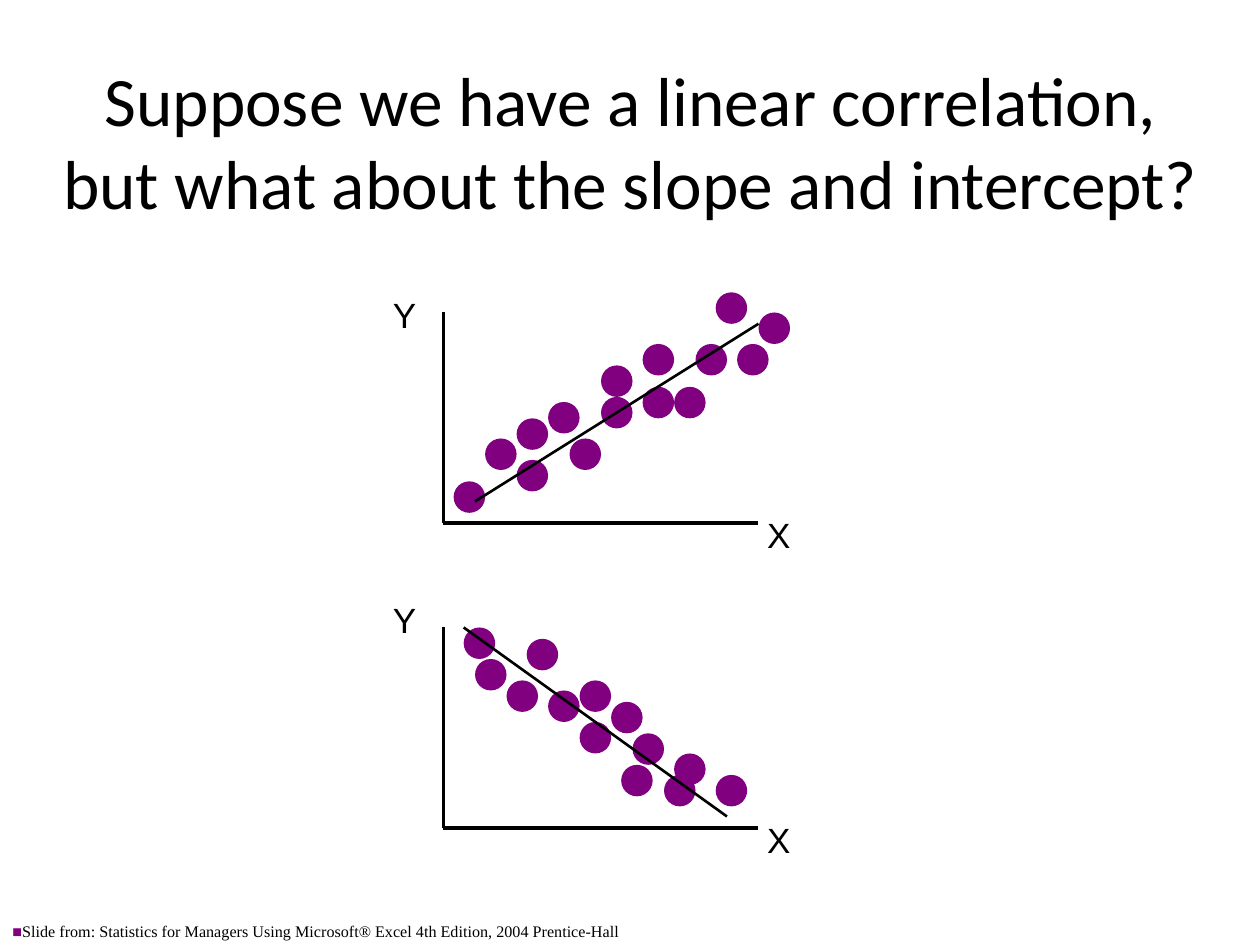
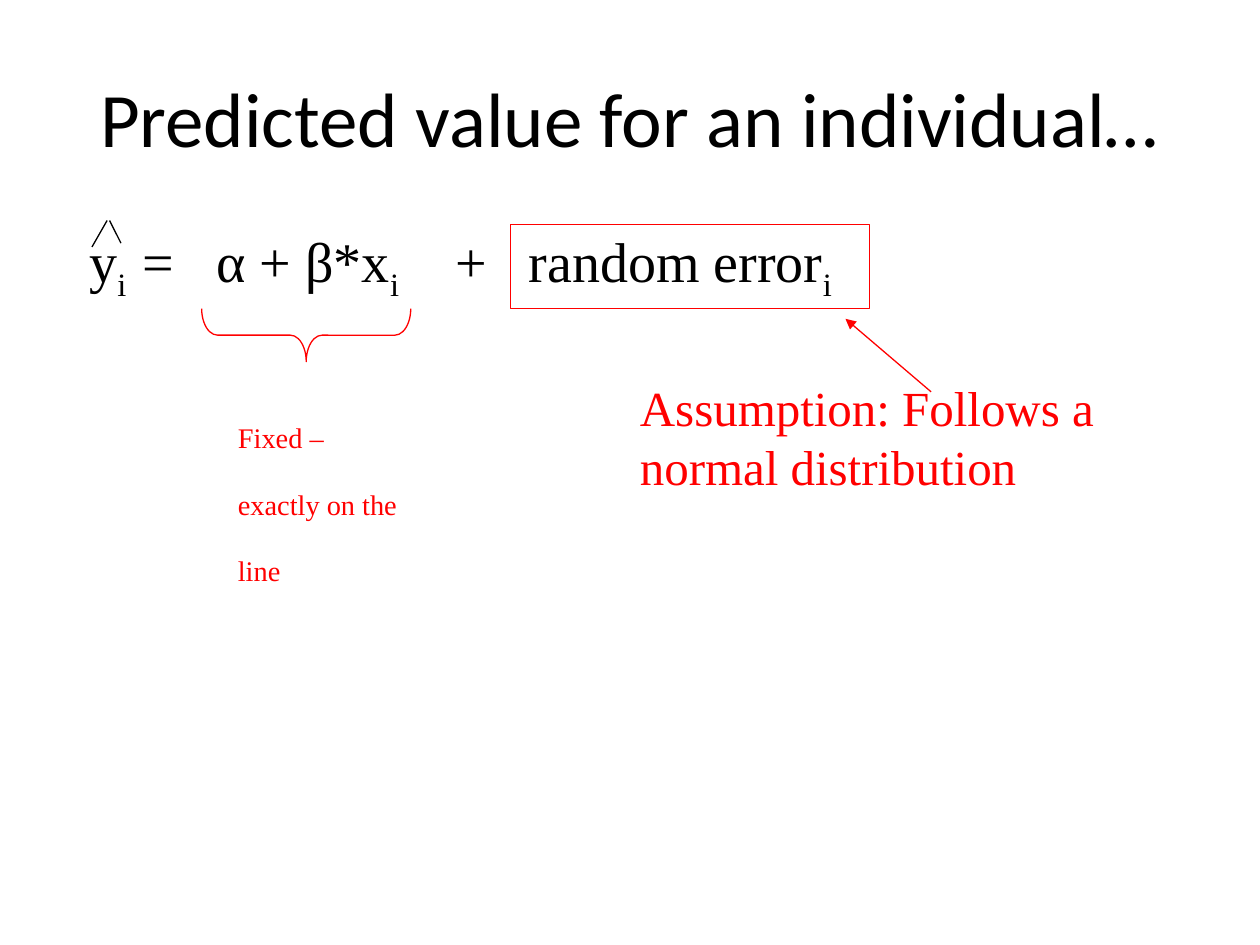
from lxml.etree import SubElement
from pptx import Presentation
from pptx.dml.color import RGBColor
from pptx.enum.shapes import MSO_CONNECTOR as LINE, MSO_SHAPE as SHAPE
from pptx.enum.text import MSO_ANCHOR as ANCHOR, PP_ALIGN as ALIGN
from pptx.oxml.ns import qn
from pptx.util import Inches, Pt

# Shared look
BLACK, RED, PURPLE = "000000", "FF0000", "800080"
SANS, SERIF, TITLE_FONT = "Arial", "Times New Roman", "Calibri"
DOT_SIZE = 0.25
AXIS_LEFT, AXIS_RIGHT = 3.52, 6.02

# Top-left corners of the dots in each scatter
RISING_DOTS = [
    (3.6, 3.82), (3.85, 3.48), (5.68, 2.32), (5.85, 2.73), (4.1, 3.65),
    (6.02, 2.48), (5.1, 3.07), (5.1, 2.73), (5.52, 2.73), (4.77, 2.9),
    (4.1, 3.32), (4.35, 3.19), (5.35, 3.07), (4.77, 3.15), (4.52, 3.48),
]
FALLING_DOTS = [
    (5.27, 6.15), (3.77, 5.23), (5.68, 6.15), (4.18, 5.07), (5.02, 5.82),
    (5.35, 5.98), (4.6, 5.4), (3.68, 4.98), (4.02, 5.4), (4.35, 5.48),
    (4.93, 6.07), (4.85, 5.57), (4.6, 5.73),
]


def paint(color_format, hex_color):
    color_format.rgb = RGBColor.from_string(hex_color)


def style_font(font, name, size, color=BLACK):
    font.name, font.size = name, Pt(size)
    paint(font.color, color)


def place(shape, left, top, width, height):
    shape.left, shape.top = Inches(left), Inches(top)
    shape.width, shape.height = Inches(width), Inches(height)


def set_title(page, text, size, left, top, width, height):
    title = page.shapes.title
    place(title, left, top, width, height)
    title.text_frame.text = text
    title.text_frame.vertical_anchor = ANCHOR.MIDDLE
    para = title.text_frame.paragraphs[0]
    para.alignment = ALIGN.CENTER
    style_font(para.font, TITLE_FONT, size)


def add_text(page, text, left, top, width, height, font, size,
             color=BLACK, wrap=True):
    box = page.shapes.add_textbox(*map(Inches, (left, top, width, height)))
    box.text_frame.word_wrap = wrap
    para = box.text_frame.paragraphs[0]
    para.text = text
    style_font(para.font, font, size, color)
    return box.text_frame


def add_line(page, start, end, width, color=BLACK, arrow=False):
    line = page.shapes.add_connector(
        LINE.STRAIGHT, *map(Inches, (*start, *end)))
    line.line.width = Pt(width)
    paint(line.line.color, color)
    properties = line._element.spPr
    if arrow:
        SubElement(properties.find(qn("a:ln")), qn("a:tailEnd"), type="triangle")
    SubElement(properties, qn("a:effectLst"))


def add_dot(page, left, top):
    dot = page.shapes.add_shape(
        SHAPE.OVAL, *map(Inches, (left, top, DOT_SIZE, DOT_SIZE)))
    dot.shadow.inherit = False
    dot.fill.solid()
    paint(dot.fill.fore_color, PURPLE)
    dot.line.fill.background()


def add_outline(page, kind, left, top, width, height):
    shape = page.shapes.add_shape(
        kind, *map(Inches, (left, top, width, height)))
    shape.shadow.inherit = False
    shape.fill.background()
    shape.line.width = Pt(0.75)
    paint(shape.line.color, RED)
    return shape


def add_scatter(page, top, bottom, y_label_top, dots, trend):
    corner = (AXIS_LEFT, bottom)
    add_line(page, (AXIS_LEFT, top), corner, 2)
    add_line(page, corner, (AXIS_RIGHT, bottom), 2)
    for name, left, label_top in (("Y", AXIS_LEFT - 0.5, y_label_top),
                                  ("X", AXIS_RIGHT - 0.03, bottom - 0.12)):
        add_text(page, name, left, label_top, 0.39, 0.43, SANS, 20, wrap=False)
    for dot in dots:
        add_dot(page, *dot)
    add_line(page, *trend, 1.5)


def add_source_note(page, text):
    frame = add_text(page, text, 0, 7.12, 8.59, 0.37, SERIF, 9.2)
    frame.vertical_anchor = ANCHOR.BOTTOM
    frame.margin_bottom = Inches(0.02)
    properties = frame.paragraphs[0]._p.get_or_add_pPr()
    font_defaults = properties.find(qn("a:defRPr"))
    bullet_color = SubElement(properties, qn("a:buClr"))
    SubElement(bullet_color, qn("a:srgbClr"), val=PURPLE)
    SubElement(properties, qn("a:buSzPct"), val="100000")
    SubElement(properties, qn("a:buFont"), typeface=SANS)
    SubElement(properties, qn("a:buChar"), char="■")
    # Font defaults must follow the bullet elements
    properties.append(font_defaults)


def add_span(para, text, **attributes):
    span = para.add_run()
    span.text = text
    for name, value in attributes.items():
        span.font._element.set(name, str(value))


def add_equation(page):
    body = page.placeholders[1]
    place(body, 0.5, 1.75, 9, 4.95)
    frame = body.text_frame
    frame.margin_left = Inches(0.21)
    para = frame.paragraphs[0]
    properties = para._p.get_or_add_pPr()
    properties.set("marL", "0")
    properties.set("indent", "0")
    SubElement(properties, qn("a:buNone"))
    para.space_before = Pt(0)
    style_font(para.font, SERIF, 32)
    # Text, subscript i or not, and extra points in the gap that follows
    for text, indexed, gap in (("y", True, 1.3), ("=", False, 16),
                               ("α + β*x", True, 24), ("+", False, 16),
                               ("random error", True, None)):
        add_span(para, text)
        if indexed:
            add_span(para, "i", baseline=-25000)
        if gap is not None:
            add_span(para, " ", spc=round(gap * 100))


def build_scatter_page(deck):
    page = deck.slides.add_slide(deck.slide_layouts[5])
    set_title(page, "Suppose we have a linear correlation,\v"
              "but what about the slope and intercept?", 39.6,
              0.2, 0.49, 9.61, 1.25)
    add_scatter(page, 2.48, 4.15, 2.28, RISING_DOTS,
                ((3.77, 3.98), (6.02, 2.57)))
    add_scatter(page, 4.98, 6.57, 4.7, FALLING_DOTS,
                ((3.68, 4.98), (5.77, 6.48)))
    add_source_note(page, "Slide from: Statistics for Managers Using "
                    "Microsoft® Excel 4th Edition, 2004 Prentice-Hall")


def build_prediction_page(deck):
    page = deck.slides.add_slide(deck.slide_layouts[1])
    set_title(page, "Predicted value for an individual…", 44,
              0.5, 0.3, 9, 1.25)
    add_equation(page)
    # Hat above the y
    add_line(page, (0.73, 1.96), (0.85, 1.75), 0.75)
    add_line(page, (0.87, 1.75), (0.96, 1.93), 0.75)
    # Random part
    add_outline(page, SHAPE.RECTANGLE, 4.05, 1.78, 2.85, 0.67)
    add_line(page, (7.39, 3.11), (6.71, 2.53), 0.75, RED, arrow=True)
    add_text(page, "Assumption: Follows a normal distribution",
             4.98, 2.95, 3.99, 1.04, SERIF, 28, RED)
    # Fixed part
    brace = add_outline(page, SHAPE.RIGHT_BRACE, 2.22, 1.83, 0.42, 1.66)
    brace.rotation = 90
    brace.adjustments[0] = 0.3
    fixed = add_text(page, "Fixed – exactly on the line",
                     1.79, 3.03, 1.57, 1.97, SERIF, 16.2, RED)
    fixed.paragraphs[0].line_spacing = Pt(38)


def main():
    deck = Presentation()
    deck.slide_width, deck.slide_height = Inches(10), Inches(7.5)
    build_scatter_page(deck)
    build_prediction_page(deck)
    deck.save("out.pptx")


if __name__ == "__main__":
    main()
